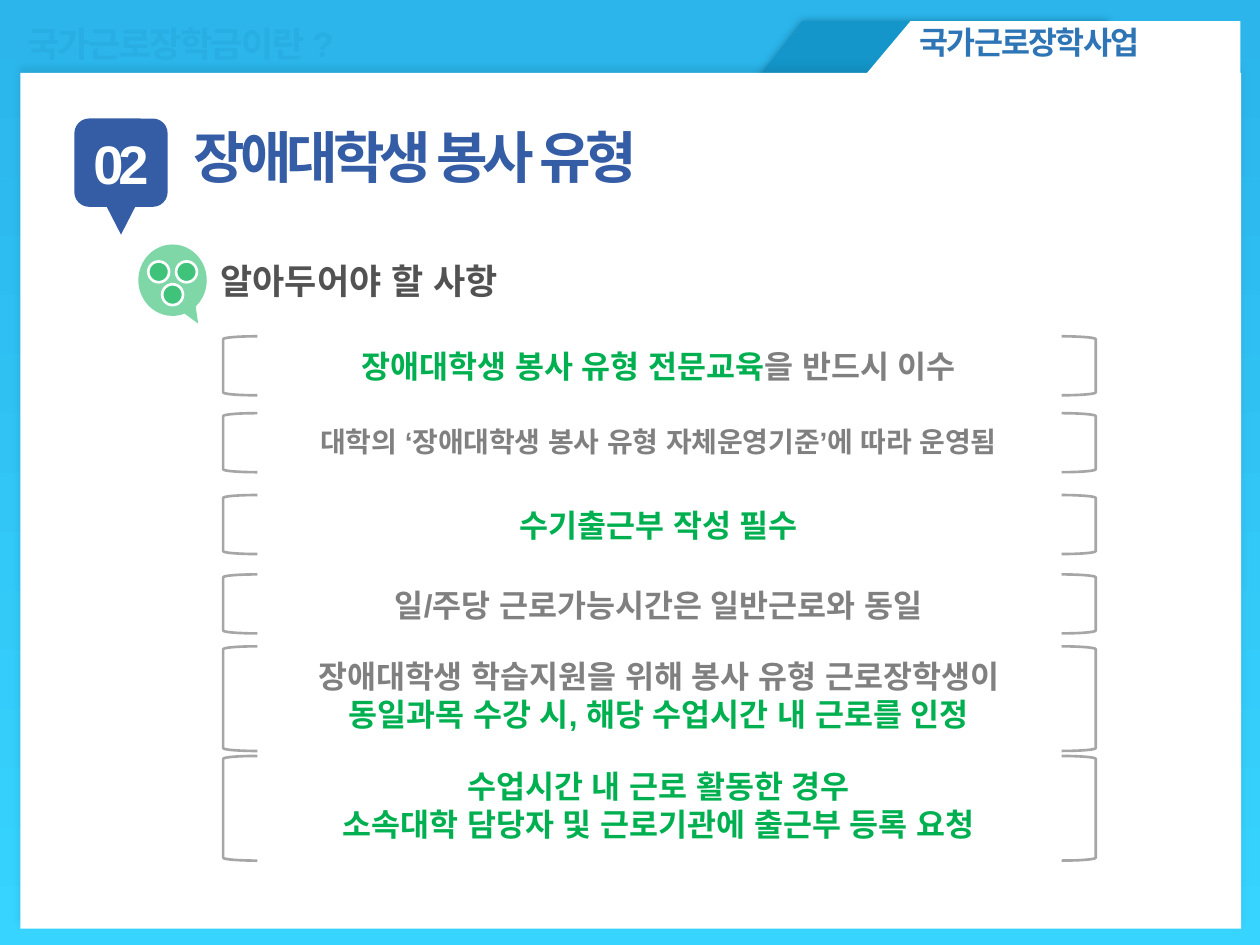
from lxml.etree import SubElement
from pptx import Presentation
from pptx.dml.color import RGBColor
from pptx.enum.shapes import MSO_SHAPE as Kind
from pptx.enum.text import MSO_ANCHOR, MSO_AUTO_SIZE, PP_ALIGN
from pptx.oxml.ns import qn
from pptx.util import Cm, Pt

FONT = "Arial"
INK = {
    "top": "2BB5EB", "base": "37D4FF", "ghost": "29AEE4", "tab": "1496CA",
    "shade": "0A4C66", "white": "FFFFFF", "head": "2E75B6", "navy": "355DA5",
    "dark": "525252", "gray": "808080", "green": "00B050", "edge": "A6A6A6",
}
ROWS = [
    (6.78, 1.19, 18, [[("장애대학생 봉사 유형 전문교육", "green"), ("을 반드시 이수", "gray")]]),
    (8.33, 1.19, 16, [[("대학의 ‘장애대학생 봉사 유형 자체운영기준’에 따라 운영됨", "gray")]]),
    (9.98, 1.19, 18, [[("수기출근부 작성 필수", "green")]]),
    (11.58, 1.19, 18, [[("일/주당 근로가능시간은 일반근로와 동일", "gray")]]),
    (13.03, 2.11, 18, [[("장애대학생 학습지원을 위해 봉사 유형 근로장학생이", "gray")],
                       [("동일과목 수강 시, 해당 수업시간 내 근로를 인정", "green")]]),
    (15.24, 2.11, 18, [[("수업시간 내 근로 활동한 경우", "green")],
                       [("소속대학 담당자 및 근로기관에 출근부 등록 요청", "green")]]),
]


def rgb(name):
    return RGBColor.from_string(INK[name])


def paint(slide):
    fill = slide.background.fill
    fill.gradient()
    fill.gradient_angle = 270
    for stop, name in zip(fill.gradient_stops, ("top", "base")):
        stop.color.rgb = rgb(name)


def write(frame, lines, size, align=PP_ALIGN.LEFT, space=0):
    for i, line in enumerate(lines):
        para = frame.add_paragraph() if i else frame.paragraphs[0]
        para.alignment = align
        for words, name in line:
            run = para.add_run()
            run.text = words
            font = run.font
            font.name, font.size, font.bold = FONT, Pt(size), True
            font.color.rgb = rgb(name)
            props = run._r.get_or_add_rPr()
            SubElement(props, qn("a:ea"), typeface=FONT)
            if space:
                props.set("spc", str(space * 100))


def label(slide, box, lines, size, align=PP_ALIGN.LEFT, space=0):
    frame = slide.shapes.add_textbox(*map(Cm, box)).text_frame
    frame.word_wrap = True
    frame.auto_size = MSO_AUTO_SIZE.SHAPE_TO_FIT_TEXT
    write(frame, lines, size, align, space)


def block(slide, kind, box, fill, line=None, alpha=None):
    shape = slide.shapes.add_shape(kind, *map(Cm, box))
    shape.shadow.inherit = False
    shape.fill.solid()
    shape.fill.fore_color.rgb = rgb(fill)
    if alpha:
        tint = shape._element.spPr.find(qn("a:solidFill"))[0]
        SubElement(tint, qn("a:alpha"), val=str(alpha * 1000))
    if line:
        shape.line.color.rgb = rgb(line)
        shape.line.width = Pt(1.5)
    else:
        shape.line.fill.background()
    return shape


def shade(shape, alpha, blur, dist, angle):
    effect = shape._element.spPr.find(qn("a:effectLst"))
    outer = SubElement(effect, qn("a:outerShdw"), blurRad=str(Pt(blur)),
                       dist=str(Pt(dist)), dir=str(angle * 60000),
                       algn="ctr", rotWithShape="0")
    tint = SubElement(outer, qn("a:srgbClr"), val=INK["shade"])
    SubElement(tint, qn("a:alpha"), val=str(alpha * 1000))


def tab(slide, box, fill):
    shape = block(slide, Kind.FLOWCHART_MANUAL_INPUT, box, fill)
    shape.rotation = 90
    shape._element.spPr.find(qn("a:xfrm")).set("flipV", "1")
    return shape


def header(slide):
    label(slide, (0.3, 0.33, 8, 1.12), [[("국가근로장학금이란 ?", "ghost")]], 20, space=-1)
    shade(tab(slide, (17.5, -2.44, 1.98, 7.7), "tab"), 52, 5, 0, 0)
    panel = block(slide, Kind.RECTANGLE, (0.41, 1.47, 24.61, 17.25), "white")
    shade(panel, 14, 4, 3, 270)
    tab(slide, (19.86, -2.74, 1.98, 8.31), "white")
    label(slide, (18.29, 0.33, 6.81, 1.02), [[("국가근로장학사업", "head")]], 18, space=-1)


def title(slide):
    label(slide, (3.66, 2.34, 11, 1.63), [[("장애대학생 봉사 유형", "navy")]], 32, space=-3)
    badge = block(slide, Kind.FLOWCHART_ALTERNATE_PROCESS, (1.5, 2.39, 1.88, 1.78), "navy")
    frame = badge.text_frame
    frame.margin_left = frame.margin_right = Cm(0.1)
    frame.margin_top = frame.margin_bottom = Cm(0.13)
    frame.vertical_anchor = MSO_ANCHOR.MIDDLE
    write(frame, [[("02", "white")]], 31, PP_ALIGN.CENTER, -3)
    block(slide, Kind.FLOWCHART_MERGE, (2.06, 3.99, 0.76, 0.74), "navy")


def topic(slide):
    label(slide, (4.19, 5.11, 11.28, 1.12), [[("알아두어야 할 사항", "dark")]], 20)
    bubble = block(slide, Kind.OVAL_CALLOUT, (2.79, 4.93, 1.38, 1.44), "green", alpha=50)
    bubble.adjustments[0], bubble.adjustments[1] = 0.374, 0.608
    for x, y in ((2.99, 5.27), (3.55, 5.27), (3.27, 5.73)):
        dot = block(slide, Kind.OVAL, (x, y, 0.42, 0.42), "green", "white", 50)
        dot.rotation = 270


def row(slide, top, high, size, lines):
    for kind, left in ((Kind.LEFT_BRACKET, 4.5), (Kind.RIGHT_BRACKET, 21.4)):
        block(slide, kind, (left, top, 0.69, high), "white", "edge")
    label(slide, (5.18, top + 0.1, 16.2, high - 0.2), lines, size, PP_ALIGN.CENTER)


def main():
    deck = Presentation()
    deck.slide_width, deck.slide_height = Cm(25.4), Cm(19.05)
    slide = deck.slides.add_slide(deck.slide_layouts[6])
    paint(slide)
    header(slide)
    title(slide)
    topic(slide)
    for item in ROWS:
        row(slide, *item)
    deck.save("out.pptx")


if __name__ == "__main__":
    main()
